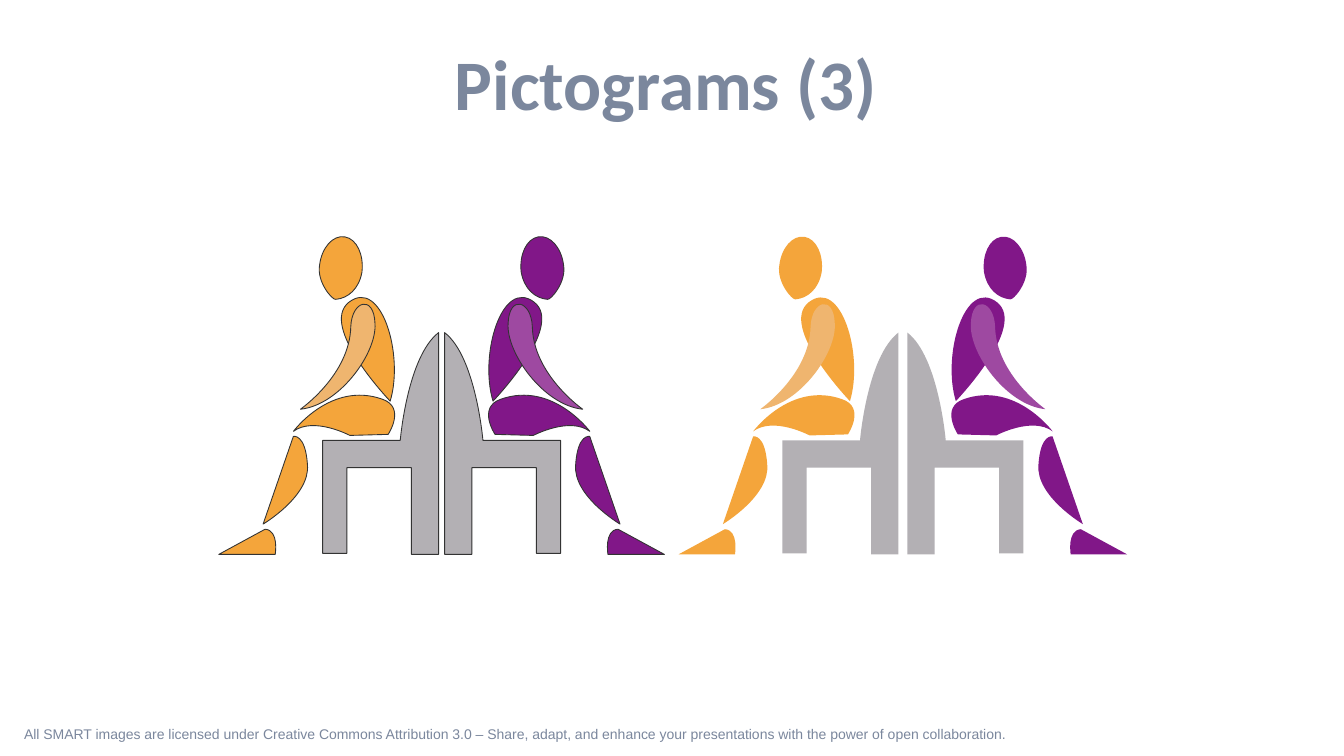
from dataclasses import dataclass
from typing import Optional

from lxml.etree import SubElement
from pptx import Presentation
from pptx.dml.color import RGBColor
from pptx.enum.text import MSO_ANCHOR, MSO_AUTO_SIZE, PP_ALIGN
from pptx.oxml.ns import qn
from pptx.shapes.autoshape import Shape
from pptx.slide import Slide
from pptx.util import Inches, Pt

SLATE = RGBColor(0x7B, 0x87, 0x9D)
PURPLE = RGBColor(0x81, 0x17, 0x88)
LIGHT_PURPLE = RGBColor(0x9E, 0x49, 0xA1)
ORANGE = RGBColor(0xF4, 0xA5, 0x3B)
LIGHT_ORANGE = RGBColor(0xEF, 0xB5, 0x6F)
GREY = RGBColor(0xB3, 0xB0, 0xB4)
CHARCOAL = RGBColor(0x33, 0x33, 0x33)


@dataclass(frozen=True)
class Palette:
    body: RGBColor
    arm: RGBColor
    chair: RGBColor = GREY


@dataclass(frozen=True)
class Part:
    """A closed outline: two numbers make a line, six make a Bézier curve."""
    role: str
    start: tuple[float, float]
    segments: tuple[tuple[float, ...], ...]


@dataclass(frozen=True)
class Sitter:
    backrest: float
    direction: int
    palette: Palette
    outline: Optional[RGBColor] = None


# One sitter facing right; x is measured from the back of the chair
PARTS = (
    # Head
    Part("body", (1.18, 2.63), (
        (1.21, 2.8, 1.05, 2.98, 1.02, 2.97),
        (0.9, 2.96, 0.79, 2.87, 0.76, 2.7),
        (0.74, 2.53, 0.81, 2.37, 0.93, 2.35),
        (1.05, 2.33, 1.16, 2.46, 1.18, 2.63))),
    # Torso
    Part("body", (0.48, 3.98), (
        (0.48, 3.98, 1.19, 3.24, 0.89, 3),
        (0.57, 2.75, 0.34, 3.52, 0.48, 3.98))),
    # Arm
    Part("arm", (1.37, 4.06), (
        (1.37, 4.06, 0.88, 3.72, 0.87, 3.24),
        (0.86, 2.98, 0.64, 2.92, 0.63, 3.21),
        (0.61, 3.5, 0.98, 4.02, 1.37, 4.06))),
    # Thigh
    Part("body", (0.5, 4.31), (
        (0.88, 4.32),
        (0.88, 4.32, 1.24, 4.13, 1.44, 4.28),
        (1.44, 4.28, 1.07, 3.78, 0.56, 3.96),
        (0.32, 4.04, 0.5, 4.31, 0.5, 4.31))),
    # Shin
    Part("body", (1.44, 4.33), (
        (1.74, 5.2),
        (1.74, 5.2, 1.27, 4.92, 1.3, 4.61),
        (1.32, 4.3, 1.44, 4.33, 1.44, 4.33))),
    # Foot
    Part("body", (1.72, 5.25), (
        (2.18, 5.5), (1.62, 5.5),
        (1.62, 5.5, 1.58, 5.26, 1.72, 5.25))),
    # Chair
    Part("chair", (0, 3.3), (
        (0, 5.5), (0.27, 5.5), (0.27, 4.64), (0.91, 4.64),
        (0.91, 5.49), (1.15, 5.49), (1.15, 4.37), (0.38, 4.37),
        (0.38, 4.37, 0.31, 3.54, 0, 3.3))),
)

PURPLE_PALETTE = Palette(PURPLE, LIGHT_PURPLE)
ORANGE_PALETTE = Palette(ORANGE, LIGHT_ORANGE)
SITTERS = (
    Sitter(4.41, 1, PURPLE_PALETTE, CHARCOAL),
    Sitter(9, 1, PURPLE_PALETTE),
    Sitter(4.35, -1, ORANGE_PALETTE, CHARCOAL),
    Sitter(8.91, -1, ORANGE_PALETTE),
)


def bend_curves(shape: Shape, part: Part) -> None:
    """Join the three points of each curve into one Bézier segment."""
    lines = iter(list(shape.element.iter(qn("a:lnTo"))))
    for segment in part.segments:
        line = next(lines)
        if len(segment) == 2:
            continue
        curve = SubElement(line.getparent(), qn("a:cubicBezTo"))
        line.addprevious(curve)
        for control in (line, next(lines), next(lines)):
            curve.append(control[0])
            control.getparent().remove(control)


def draw_sitter(slide: Slide, sitter: Sitter) -> None:
    group = slide.shapes.add_group_shape()
    colours = {"body": sitter.palette.body, "arm": sitter.palette.arm,
               "chair": sitter.palette.chair}
    for part in PARTS:
        pairs = [part.start]
        for segment in part.segments:
            pairs.extend(zip(segment[::2], segment[1::2]))
        points = [(Inches(sitter.backrest + sitter.direction * x), Inches(y))
                  for x, y in pairs]
        builder = group.shapes.build_freeform(*points[0])
        builder.add_line_segments(points[1:], close=True)
        shape = builder.convert_to_shape()
        bend_curves(shape, part)
        shape.shadow.inherit = False
        shape.fill.solid()
        shape.fill.fore_color.rgb = colours[part.role]
        if sitter.outline is None:
            shape.line.fill.background()
        else:
            shape.line.color.rgb = sitter.outline
            shape.line.width = Pt(0.63)


def add_title(slide: Slide) -> None:
    title = slide.shapes.title
    title.left, title.top = Inches(0.37), Inches(0.08)
    title.width, title.height = Inches(12.47), Inches(1.46)
    frame = title.text_frame
    frame.text = "Pictograms (3)"
    frame.auto_size = MSO_AUTO_SIZE.NONE
    frame.vertical_anchor = MSO_ANCHOR.MIDDLE
    paragraph = frame.paragraphs[0]
    paragraph.alignment = PP_ALIGN.CENTER
    paragraph.font.name = "Calibri"
    paragraph.font.size = Pt(50.7)
    paragraph.font.bold = True
    paragraph.font.color.rgb = SLATE


def add_licence(slide: Slide) -> None:
    box = slide.shapes.add_textbox(Inches(0.14), Inches(7.18), Inches(10.06), Inches(0.24))
    frame = box.text_frame
    frame.word_wrap = True
    frame.auto_size = MSO_AUTO_SIZE.SHAPE_TO_FIT_TEXT
    frame.text = ("All SMART images are licensed under Creative Commons Attribution 3.0 – "
                  "Share, adapt, and enhance your presentations with the power of "
                  "open collaboration.")
    paragraph = frame.paragraphs[0]
    paragraph.line_spacing = 0.8
    paragraph.font.name = "Arial"
    paragraph.font.size = Pt(10)
    paragraph.font.color.rgb = SLATE


def main() -> None:
    presentation = Presentation()
    presentation.slide_width = Inches(13.33)
    presentation.slide_height = Inches(7.5)
    slide = presentation.slides.add_slide(presentation.slide_layouts[5])
    add_licence(slide)
    add_title(slide)
    for sitter in SITTERS:
        draw_sitter(slide, sitter)
    presentation.save("out.pptx")


if __name__ == "__main__":
    main()
